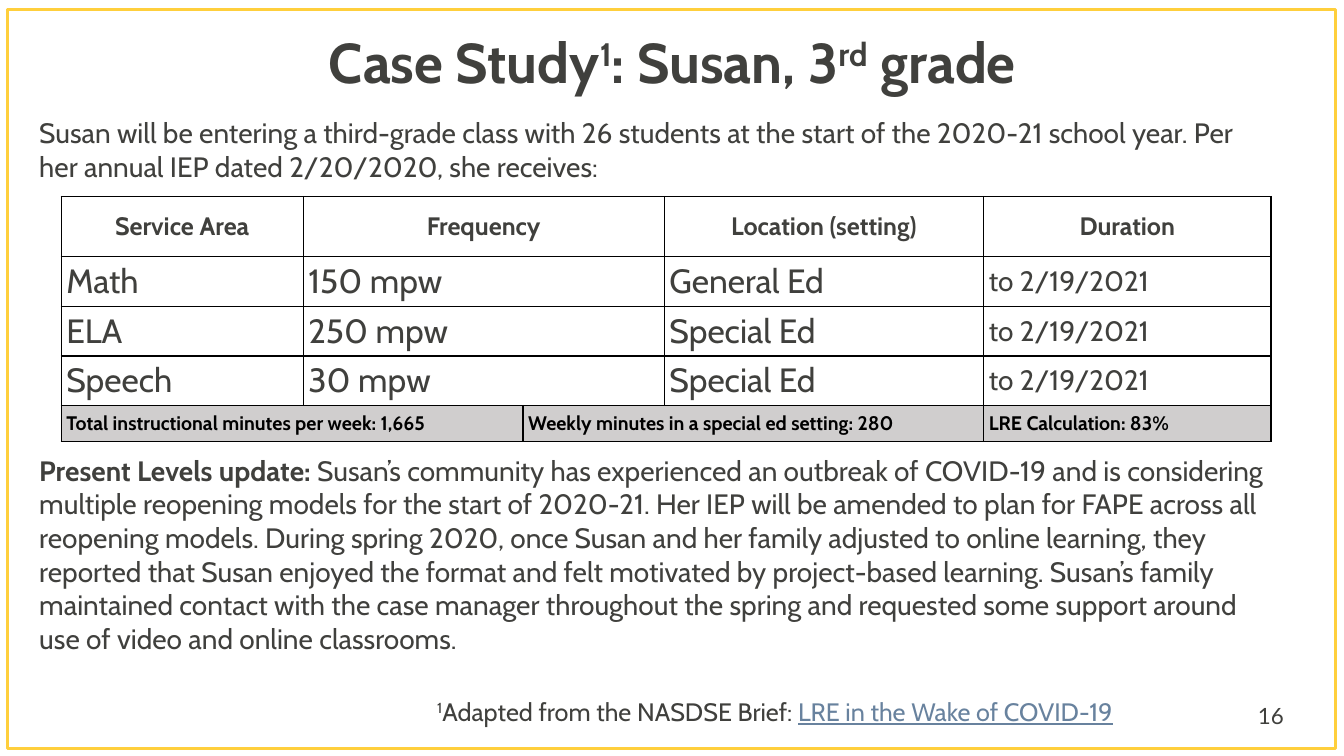
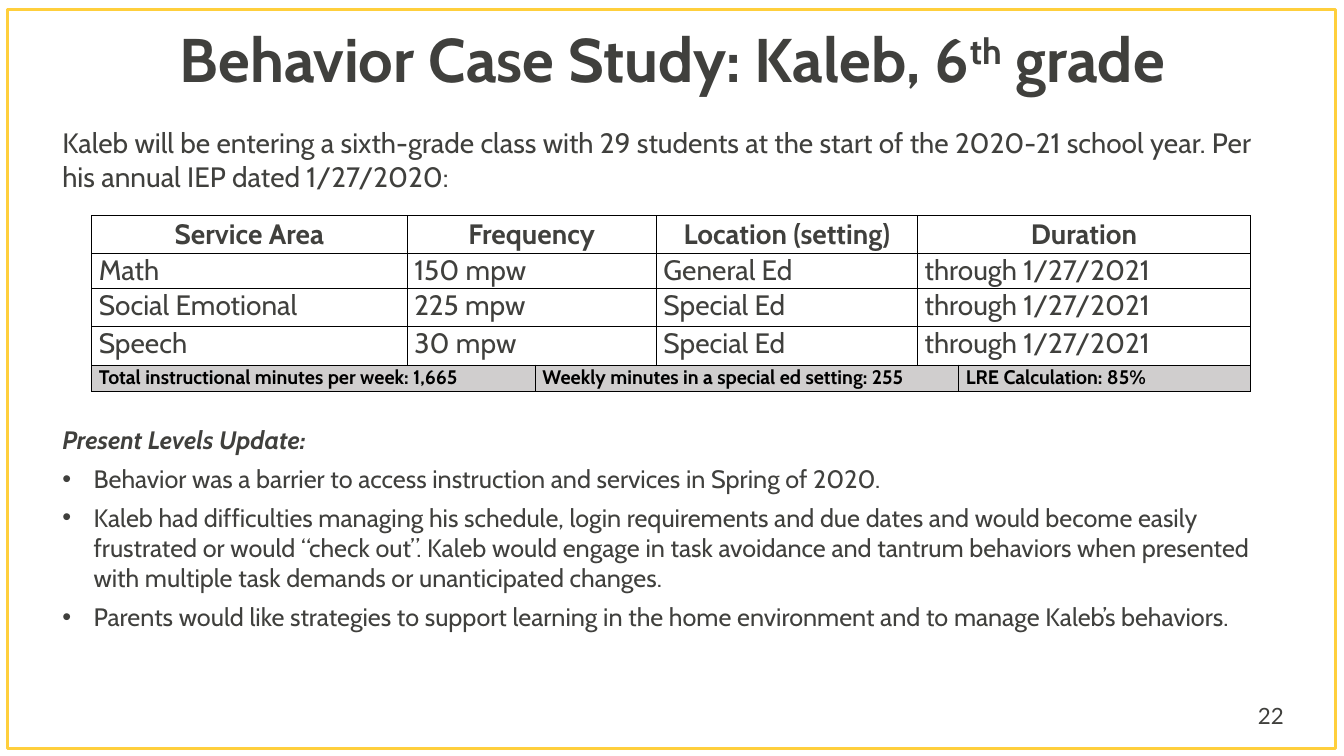
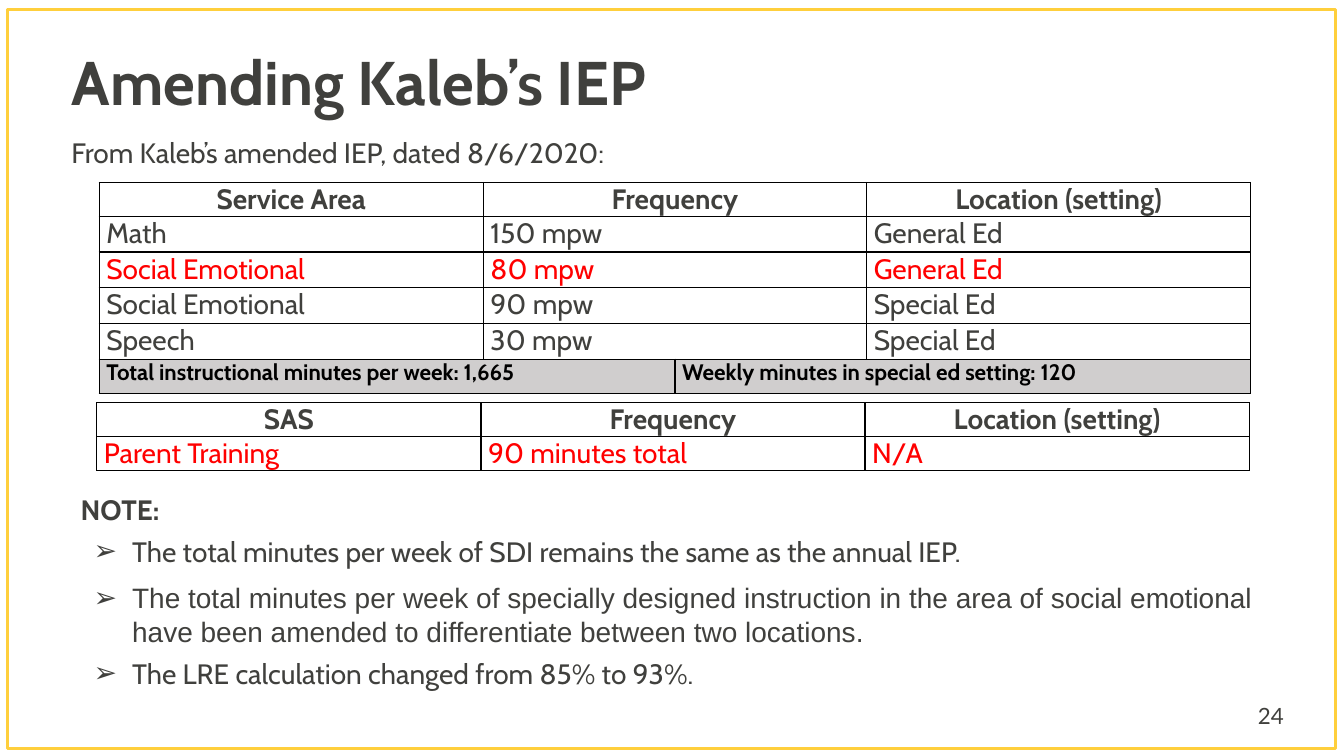
from lxml.etree import SubElement
from pptx import Presentation
from pptx.dml.color import RGBColor
from pptx.enum.shapes import MSO_SHAPE
from pptx.enum.text import MSO_ANCHOR, MSO_AUTO_SIZE, PP_ALIGN
from pptx.oxml.ns import qn
from pptx.util import Cm, Pt

INK = RGBColor(0x40, 0x40, 0x3D)
BLACK = RGBColor(0, 0, 0)
RED = RGBColor(0xFF, 0, 0)
GOLD = RGBColor(0xFF, 0xCF, 0x3C)
GREY = RGBColor(0xD0, 0xCE, 0xCE)
LINK = RGBColor(0x68, 0x82, 0x9E)
FONT = "Cabin"
FRAME = (0.18, 0.23, 33.48, 18.64)
NUMBER_BOX = (31.45, 17.53, 1.78, 1.02)
SUPER = {"superscript": True}
DOT = {"size": 18, "after": 6, "bullet": "•", "indent": 0.79, "hanging": 0.79}
ARROW = {"after": 6, "bullet": "➢", "indent": 1.3, "hanging": 0.97}
TOTAL_MINUTES = "Total instructional minutes per week: 1,665"

SLIDES = [
    {
        "number": "16",
        "title": [("Case Study", {}), ("1", SUPER), (": Susan, 3", {}), ("rd", SUPER), (" grade", {})],
        "title_box": (2.34, 0.71, 29.21, 1.85),
        "title_format": {"size": 40, "align": PP_ALIGN.CENTER},
        "texts": [
            {"box": (0.74, 2.79, 31.62, 1.95), "paragraphs": [
                ("Susan will be entering a third-grade class with 26 students at the start of the 2020-21 "
                 "school year. Per her annual IEP dated 2/20/2020, she receives:", {}),
            ]},
            {"box": (0.74, 11.3, 31.62, 5.4), "paragraphs": [
                ([("Present Levels update: ", {"bold": True}),
                  ("Susan’s community has experienced an outbreak of COVID-19 and is considering multiple "
                   "reopening models for the start of 2020-21. Her IEP will be amended to plan for FAPE across "
                   "all reopening models. During spring 2020, once Susan and her family adjusted to online "
                   "learning, they reported that Susan enjoyed the format and felt motivated by project-based "
                   "learning. Susan’s family maintained contact with the case manager throughout the spring and "
                   "requested some support around use of video and online classrooms.", {})], {}),
            ]},
            {"box": (10.77, 17.42, 18.95, 1.02), "paragraphs": [
                ([("1", SUPER), ("Adapted from the NASDSE Brief: ", {}),
                  ("LRE in the Wake of COVID-19", {"color": LINK, "underline": True})], {"size": 18}),
            ]},
        ],
        "tables": [{
            "at": (1.54, 4.95),
            "columns": (6.1, 5.54, 3.56, 8.05, 7.24),
            "heights": (1.52, 1.25, 1.25, 1.25, 0.91),
            "margin": 0.13,
            "sizes": {"header": 18, "data": 24, "total": 14},
            "column_sizes": {4: 20},
            "anchor": MSO_ANCHOR.MIDDLE,
            "rows": [
                ("header", ["Service Area", "Frequency", None, "Location (setting)", "Duration"]),
                ("data", ["Math", "150 mpw", None, "General Ed", "to 2/19/2021"]),
                ("data", ["ELA", "250 mpw", None, "Special Ed", "to 2/19/2021"]),
                ("data", ["Speech", "30 mpw", None, "Special Ed", "to 2/19/2021"]),
                ("total", [TOTAL_MINUTES, None, "Weekly minutes in a special ed setting: 280", None,
                           "LRE Calculation: 83%"]),
            ],
        }],
    },
    {
        "number": "22",
        "title": [("Behavior Case Study: Kaleb, 6", {}), ("th", SUPER), (" grade", {})],
        "title_box": (2.34, 0.66, 29.21, 1.85),
        "title_format": {"size": 44, "align": PP_ALIGN.CENTER},
        "texts": [
            {"box": (1.32, 3.05, 31.04, 1.95), "paragraphs": [
                ("Kaleb will be entering a sixth-grade class with 29 students at the start of the 2020-21 "
                 "school year. Per his annual IEP dated 1/27/2020:", {}),
            ]},
            {"box": (1.32, 10.58, 31.04, 5.8), "paragraphs": [
                ("Present Levels Update:", {"size": 18, "bold": True, "italic": True, "after": 6}),
                ("Behavior was a barrier to access instruction and services in Spring of 2020.", DOT),
                ("Kaleb had difficulties managing his schedule, login requirements and due dates and would "
                 "become easily frustrated or would “check out”. Kaleb would engage in task avoidance and "
                 "tantrum behaviors when presented with multiple task demands or unanticipated changes.", DOT),
                ("Parents would like strategies to support learning in the home environment and to manage "
                 "Kaleb’s behaviors.", DOT),
            ]},
        ],
        "tables": [{
            "at": (2.31, 5.44),
            "columns": (7.95, 3.23, 3.05, 6.58, 1.04, 7.35),
            "heights": (0.94, 0.89, 0.96, 0.97, 0.66),
            "sizes": {"header": 20, "data": 20, "total": 14},
            "rows": [
                ("header", ["Service Area", "Frequency", None, "Location (setting)", "Duration", None]),
                ("data", ["Math", "150 mpw", None, "General Ed", "through 1/27/2021", None]),
                ("data", ["Social Emotional", "225 mpw", None, "Special Ed", "through 1/27/2021", None]),
                ("data", ["Speech", "30 mpw", None, "Special Ed", "through 1/27/2021", None]),
                ("total", [TOTAL_MINUTES, None, "Weekly minutes in a special ed setting: 255", None, None,
                           "LRE Calculation: 85%"]),
            ],
        }],
    },
    {
        "number": "24",
        "title": "Amending Kaleb’s IEP",
        "title_box": (1.55, 0.89, 29.21, 2.51),
        "title_format": {"size": 44, "align": PP_ALIGN.LEFT},
        "texts": [
            {"box": (1.55, 3.28, 27.51, 1.12), "anchor": MSO_ANCHOR.MIDDLE, "paragraphs": [
                ("From Kaleb’s amended IEP, dated 8/6/2020:", {}),
            ]},
            {"box": (1.78, 12.19, 30.43, 5.41), "anchor": MSO_ANCHOR.MIDDLE, "paragraphs": [
                ("NOTE:", {"bold": True, "after": 6}),
                ("The total minutes per week of SDI remains the same as the annual IEP.",
                 {**ARROW, "after": 9}),
                ("The total minutes per week of specially designed instruction in the area of social emotional "
                 "have been amended to differentiate between two locations.", {**ARROW, "font": "Arial"}),
                ("The LRE calculation changed from 85% to 93%.", ARROW),
            ]},
        ],
        "tables": [
            {
                "at": (2.5, 4.6),
                "columns": (9.68, 4.83, 4.83, 9.68),
                "heights": (0.85, 0.9, 0.9, 0.9, 0.9, 0.86),
                "sizes": {"header": 20, "data": 20, "changed": 20, "total": 16},
                "rows": [
                    ("header", ["Service Area", "Frequency", None, "Location (setting)"]),
                    ("data", ["Math", "150 mpw", None, "General Ed"]),
                    ("changed", ["Social Emotional", "80 mpw", None, "General Ed"]),
                    ("data", ["Social Emotional", "90 mpw", None, "Special Ed"]),
                    ("data", ["Speech", "30 mpw", None, "Special Ed"]),
                    ("total", [TOTAL_MINUTES, None, "Weekly minutes in special ed setting: 120", None]),
                ],
            },
            {
                "at": (2.44, 10.15),
                "columns": (9.68, 9.68, 9.68),
                "heights": (0.85, 0.85),
                "sizes": {"header": 20, "changed": 20},
                "rows": [
                    ("header", ["SAS", "Frequency", "Location (setting)"]),
                    ("changed", ["Parent Training", "90 minutes total", "N/A"]),
                ],
            },
        ],
    },
]

ROW_FORMATS = {
    "header": {"bold": True, "align": PP_ALIGN.CENTER},
    "data": {},
    "changed": {"color": RED},
    "total": {"bold": True, "color": BLACK},
}


def write(paragraph, text, size=20, font=FONT, color=INK, bold=False, italic=False,
          align=PP_ALIGN.LEFT, after=0, line=1.0, bullet=None, indent=0, hanging=0):
    paragraph.alignment = align
    paragraph.space_before = Pt(0)
    paragraph.space_after = Pt(after)
    paragraph.line_spacing = line
    if bullet:
        properties = paragraph._p.get_or_add_pPr()
        properties.set("marL", str(Cm(indent)))
        properties.set("indent", str(-Cm(hanging)))
        SubElement(properties, qn("a:buFont"), typeface="Arial")
        SubElement(properties, qn("a:buChar"), char=bullet)
    for words, change in [(text, {})] if isinstance(text, str) else text:
        run = paragraph.add_run()
        run.text = words
        run.font.name = font
        run.font.size = Pt(size)
        run.font.bold = change.get("bold", bold)
        run.font.italic = italic
        run.font.color.rgb = change.get("color", color)
        if change.get("underline"):
            run.font.underline = True
        if change.get("superscript"):
            run._r.get_or_add_rPr().set("baseline", "30000")


def add_text(slide, box, paragraphs, anchor=MSO_ANCHOR.TOP):
    frame = slide.shapes.add_textbox(*map(Cm, box)).text_frame
    frame.word_wrap = True
    frame.vertical_anchor = anchor
    for index, (text, style) in enumerate(paragraphs):
        paragraph = frame.add_paragraph() if index else frame.paragraphs[0]
        write(paragraph, text, **style)


def add_borders(cell):
    properties = cell._tc.get_or_add_tcPr()
    for side in ("lnL", "lnR", "lnT", "lnB"):
        border = SubElement(properties, qn(f"a:{side}"), w=str(Pt(1)))
        fill = SubElement(border, qn("a:solidFill"))
        SubElement(fill, qn("a:srgbClr"), val=str(BLACK))


def add_table(slide, at, columns, heights, sizes, rows, margin=0.18, column_sizes=None, anchor=MSO_ANCHOR.TOP):
    box = (*at, sum(columns), sum(heights))
    table = slide.shapes.add_table(len(rows), len(columns), *map(Cm, box)).table
    table.first_row = table.horz_banding = False
    for column, width in zip(table.columns, columns):
        column.width = Cm(width)
    for row_index, (kind, texts) in enumerate(rows):
        table.rows[row_index].height = Cm(heights[row_index])
        for column_index, text in enumerate(texts):
            cell = table.cell(row_index, column_index)
            add_borders(cell)
            if text is None:
                cell.fill.background()
                continue
            cell.margin_left = cell.margin_right = Cm(margin)
            cell.margin_top = cell.margin_bottom = 0
            cell.vertical_anchor = MSO_ANCHOR.MIDDLE if kind == "header" else anchor
            if kind == "total":
                cell.fill.solid()
                cell.fill.fore_color.rgb = GREY
            else:
                cell.fill.background()
            last = column_index
            while last + 1 < len(texts) and texts[last + 1] is None:
                last += 1
            if last > column_index:
                cell.merge(table.cell(row_index, last))
            size = sizes[kind]
            if kind == "data" and column_sizes:
                size = column_sizes.get(column_index, size)
            write(cell.text_frame.paragraphs[0], text, size=size, **ROW_FORMATS[kind])


def add_frame(layout, slide):
    frame = slide.shapes.add_shape(MSO_SHAPE.RECTANGLE, *map(Cm, FRAME))
    frame.shadow.inherit = False
    frame.fill.background()
    frame.line.color.rgb = GOLD
    frame.line.width = Pt(2.25)
    layout.shapes.element.append(frame.element)


def add_title(slide, text, box, style):
    title = slide.shapes.title
    title.left, title.top, title.width, title.height = map(Cm, box)
    frame = title.text_frame
    frame.auto_size = MSO_AUTO_SIZE.NONE
    frame.word_wrap = True
    frame.vertical_anchor = MSO_ANCHOR.MIDDLE
    write(frame.paragraphs[0], text, bold=True, line=0.9, **style)


def main():
    presentation = Presentation()
    presentation.slide_width, presentation.slide_height = Cm(33.87), Cm(19.05)
    layout = presentation.slide_layouts.get_by_name("Title Only")
    for content in SLIDES:
        slide = presentation.slides.add_slide(layout)
        if len(presentation.slides) == 1:
            add_frame(layout, slide)
        add_title(slide, content["title"], content["title_box"], content["title_format"])
        for text in content["texts"]:
            add_text(slide, **text)
        for table in content["tables"]:
            add_table(slide, **table)
        add_text(slide, NUMBER_BOX, [(content["number"], {"size": 16, "font": "Lato"})], MSO_ANCHOR.MIDDLE)
    presentation.save("out.pptx")


if __name__ == "__main__":
    main()
